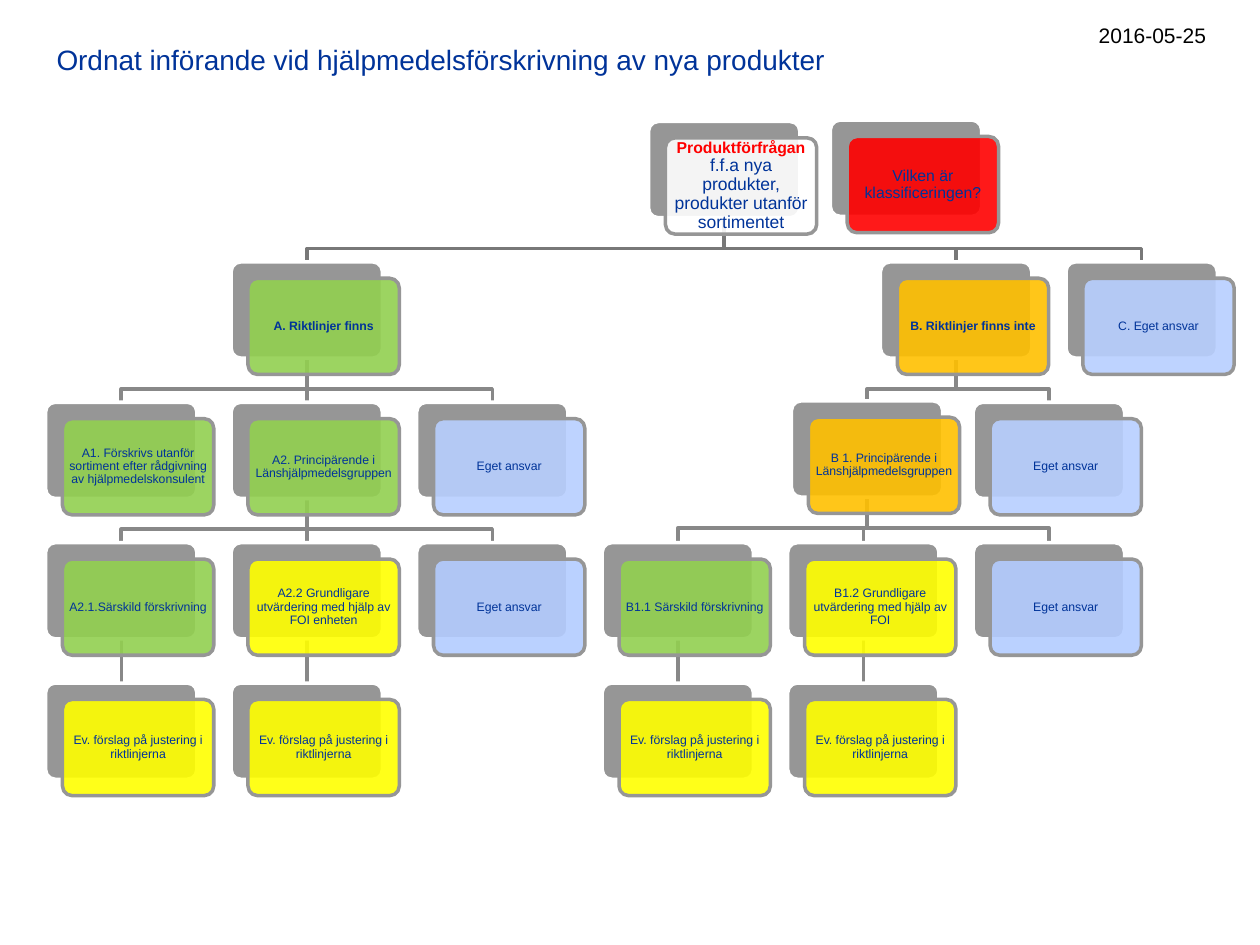
"""Build the decision tree slide for introducing new assistive products."""
from lxml.etree import SubElement
from pptx import Presentation
from pptx.dml.color import RGBColor as Rgb
from pptx.enum.shapes import MSO_CONNECTOR as Link, MSO_SHAPE as Shape
from pptx.enum.text import MSO_ANCHOR as Anchor, PP_ALIGN as Align
from pptx.oxml.ns import qn
from pptx.util import Cm, Pt

COLORS = {
    "navy": "003399", "black": "000000", "white": "FFFFFF", "red": "FF0000",
    "green": "92D050", "yellow": "FFFF00", "orange": "FFC000",
    "pale": "B8CFFF", "blue": "B3CCFF", "gray": "969696",
    "trunk": "787878", "branch": "888888",
}
LEFT, TOP = 0.92, 2.45
COLUMN_STEP, ROW_STEP = 3.74, 2.83
CARD_WIDTH, CARD_HEIGHT = 3.05, 1.94
OFFSET, BEND = 0.34, 0.62

ADJUST = "Ev. förslag på justering i riktlinjerna"
OWN = "Eget ansvar"
SMALL = {"size": Pt(7)}
BOLD = {"size": Pt(7), "bold": True}
MEDIUM = {"size": Pt(9)}

# name: (column, row, fill, text, format)
CARDS = {
    "A": (1, 1, "green", "A. Riktlinjer finns", BOLD),
    "A1": (0, 2, "green", "A1. Förskrivs utanför sortiment efter rådgivning av hjälpmedelskonsulent", SMALL),
    "A2": (1, 2, "green", "A2. Principärende i Länshjälpmedelsgruppen", SMALL),
    "A2.1": (0, 3, "green", "A2.1.Särskild förskrivning", SMALL),
    "A2.1 adjust": (0, 4, "yellow", ADJUST, SMALL),
    "A2.2": (1, 3, "yellow", "A2.2 Grundligare utvärdering med hjälp av FOI enheten", SMALL),
    "A2.2 adjust": (1, 4, "yellow", ADJUST, SMALL),
    "A2 own": (2, 3, "blue", OWN, SMALL),
    "A own": (2, 2, "pale", OWN, SMALL),
    "B": (4.5, 1, "orange", "B. Riktlinjer finns inte", BOLD),
    "B1": (4.02, 1.99, "orange", "B 1. Principärende i Länshjälpmedelsgruppen", SMALL),
    "B1.1": (3, 3, "green", "B1.1 Särskild förskrivning", SMALL),
    "B1.1 adjust": (3, 4, "yellow", ADJUST, SMALL),
    "B1.2": (4, 3, "yellow", "B1.2 Grundligare utvärdering med hjälp av FOI", SMALL),
    "B1.2 adjust": (4, 4, "yellow", ADJUST, SMALL),
    "B1 own": (5, 3, "blue", OWN, SMALL),
    "B own": (5, 2, "pale", OWN, SMALL),
    "C": (5.5, 1, "pale", "C. Eget ansvar", SMALL),
    "class": (4.23, -0.01, "red", "Vilken är klassificeringen?", MEDIUM),
}
ROOT = (3.25, 0, "white")
CHILDREN = {
    "A": ("A1", "A2", "A own"),
    "A2": ("A2.1", "A2.2", "A2 own"),
    "A2.1": ("A2.1 adjust",),
    "A2.2": ("A2.2 adjust",),
    "B": ("B1", "B own"),
    "B1": ("B1.1", "B1.2", "B1 own"),
    "B1.1": ("B1.1 adjust",),
    "B1.2": ("B1.2 adjust",),
}


def color(name):
    """Return the named colour."""
    return Rgb.from_string(COLORS[name])


def corner(column, row):
    """Return the left and top of a grid place in centimetres."""
    return LEFT + column * COLUMN_STEP, TOP + row * ROW_STEP


def set_line(shape, name):
    """Give a shape or connector a two point line."""
    shape.line.color.rgb = color(name)
    shape.line.width = Pt(2)


def add_span(para, text, ink, style):
    """Add a run with the given ink and font values."""
    span = para.add_run()
    span.text = text
    span.font.color.rgb = color(ink)
    for key, value in {"name": "Arial", **style}.items():
        setattr(span.font, key, value)


def add_panel(page, left, top, fill, line):
    """Add one rounded panel of a card."""
    panel = page.shapes.add_shape(
        Shape.ROUNDED_RECTANGLE, Cm(left), Cm(top), Cm(CARD_WIDTH), Cm(CARD_HEIGHT))
    panel.adjustments[0] = 0.1
    panel.shadow.inherit = False
    panel.fill.solid()
    panel.fill.fore_color.rgb = color(fill)
    set_line(panel, line)
    return panel


def add_card(page, column, row, fill, spans, margin=0.08):
    """Add a gray back panel and a translucent front panel with text."""
    left, top = corner(column, row)
    add_panel(page, left, top, "gray", "white")
    front = add_panel(page, left + OFFSET, top + OFFSET - 0.01, fill, "gray")
    tint = front.fill._xPr.find(qn("a:solidFill"))[0]
    SubElement(tint, qn("a:alpha"), val="90000")
    frame = front.text_frame
    values = {"word_wrap": True, "vertical_anchor": Anchor.MIDDLE}
    values.update({f"margin_{side}": Cm(margin) for side in ("left", "right", "top", "bottom")})
    for key, value in values.items():
        setattr(frame, key, value)
    para = frame.paragraphs[0]
    para.alignment, para.line_spacing = Align.CENTER, 0.9
    for index, span in enumerate(spans):
        if index:
            para.add_line_break()
        add_span(para, *span)


def add_link(page, parent, child, ink):
    """Join the bottom of a parent card to the top of a child card."""
    (start, top), (end, bottom) = corner(*parent[:2]), corner(*child[:2])
    start, end = start + CARD_WIDTH / 2, end + CARD_WIDTH / 2
    top += CARD_HEIGHT
    if start == end:
        link = page.shapes.add_connector(Link.STRAIGHT, Cm(start), Cm(top), Cm(end), Cm(bottom))
        SubElement(link._element.spPr, qn("a:effectLst"))
    else:
        bend = Cm(top + BEND)
        builder = page.shapes.build_freeform(Cm(start), Cm(top))
        builder.add_line_segments(
            [(Cm(start), bend), (Cm(end), bend), (Cm(end), Cm(bottom))], close=False)
        link = builder.convert_to_shape()
        link.fill.background()
        link.shadow.inherit = False
    set_line(link, ink)


def add_label(page, place, text, ink, size):
    """Add a free text box."""
    box = page.shapes.add_textbox(*map(Cm, place))
    box.text_frame.word_wrap = True
    add_span(box.text_frame.paragraphs[0], text, ink, {"size": Pt(size)})


def main():
    """Build and save the deck."""
    deck = Presentation()
    deck.slide_width, deck.slide_height = Cm(25.4), Cm(19.05)
    page = deck.slides.add_slide(deck.slide_layouts[6])
    for parent, names in CHILDREN.items():
        for name in names:
            add_link(page, CARDS[parent], CARDS[name], "branch")
    for name in "ABC":
        add_link(page, ROOT, CARDS[name], "trunk")
    add_card(page, *ROOT, [
        ("Produktförfrågan", "red", {"size": Pt(9), "bold": True}),
        ("f.f.a nya produkter, produkter utanför sortimentet", "navy", {"size": Pt(10)}),
    ], margin=0.1)
    for column, row, fill, text, style in CARDS.values():
        add_card(page, column, row, fill, [(text, "navy", style)])
    add_label(page, (21.9, 0.33, 3.02, 1.32), "2016-05-25", "black", 12)
    add_label(page, (0.89, 0.74, 19, 0.94),
              "Ordnat införande vid hjälpmedelsförskrivning av nya produkter", "navy", 16)
    deck.save("out.pptx")


if __name__ == "__main__":
    main()
